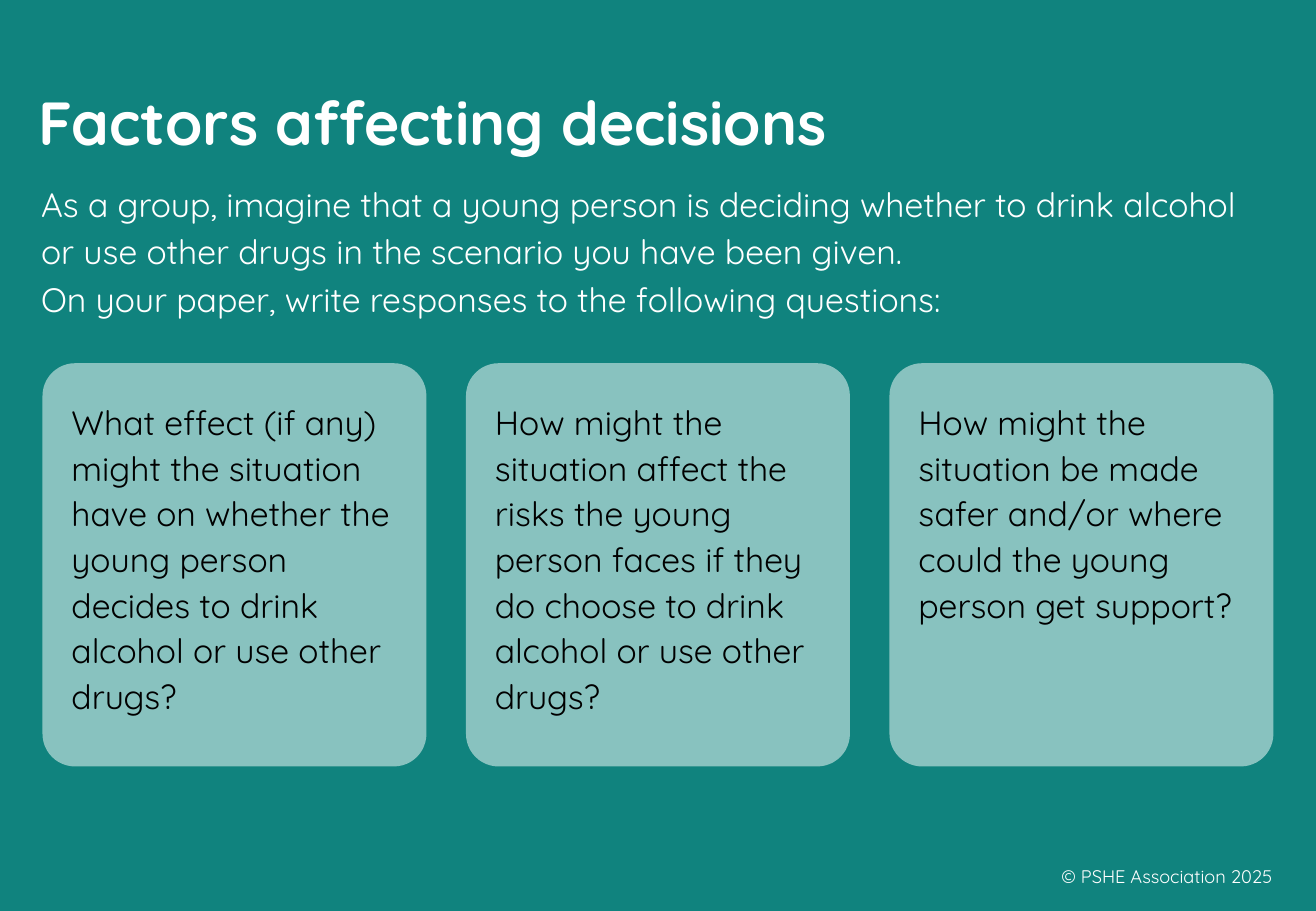
from pptx import Presentation
from pptx.dml.color import RGBColor
from pptx.enum.shapes import MSO_SHAPE
from pptx.enum.text import MSO_ANCHOR, PP_ALIGN
from pptx.util import Inches, Pt

TITLE = "Factors affecting decisions"
INTRO = [
    "As a group, imagine that a young person is deciding whether to drink alcohol "
    "or use other drugs in the scenario you have been given.",
    "On your paper, write responses to the following questions:",
]
QUESTIONS = [
    "What effect (if any) might the situation have on whether the young person "
    "decides to drink alcohol or use other drugs?",
    "How might the situation affect the risks the young person faces if they do "
    "choose to drink alcohol or use other drugs?",
    "How might the situation be made safer and/or where could the young person "
    "get support?",
]
COPYRIGHT = "© PSHE Association 2025"

FONT = "Quicksand"
TEAL = RGBColor(0x10, 0x83, 0x7E)
PALE_TEAL = RGBColor(0x88, 0xC2, 0xBF)
WHITE = RGBColor(0xFF, 0xFF, 0xFF)
BLACK = RGBColor(0, 0, 0)
TOP, MIDDLE, BOTTOM = MSO_ANCHOR.TOP, MSO_ANCHOR.MIDDLE, MSO_ANCHOR.BOTTOM
LEFT, RIGHT = PP_ALIGN.LEFT, PP_ALIGN.RIGHT
ROUNDED = MSO_SHAPE.ROUNDED_RECTANGLE

# Inches
SLIDE_WIDTH, SLIDE_HEIGHT = 10.83, 7.5
MARGIN = 0.35
CARD_WIDTH, CARD_HEIGHT, CARD_TOP = 3.16, 3.32, 2.99
CARD_GAP = (SLIDE_WIDTH - 2 * MARGIN - len(QUESTIONS) * CARD_WIDTH) / (len(QUESTIONS) - 1)


def box(left, top, width, height):
    return [Inches(length) for length in (left, top, width, height)]


def write(shape, lines, size, color, anchor=TOP, align=LEFT, spacing=None, bold=False):
    """Fill a shape with one paragraph whose lines are parted by line breaks."""
    frame = shape.text_frame
    frame.word_wrap = True
    frame.vertical_anchor = anchor
    paragraph = frame.paragraphs[0]
    paragraph.alignment = align
    paragraph.space_before = Pt(0)
    if spacing:
        paragraph.line_spacing = Pt(spacing)
    for index, line in enumerate(lines):
        if index:
            paragraph.add_line_break()
        run = paragraph.add_run()
        run.text = line
        run.font.name = FONT
        run.font.size = Pt(size)
        run.font.bold = bold
        run.font.color.rgb = color


def add_card(slide, column, question):
    left = MARGIN + column * (CARD_WIDTH + CARD_GAP)
    card = slide.shapes.add_shape(ROUNDED, *box(left, CARD_TOP, CARD_WIDTH, CARD_HEIGHT))
    card.adjustments[0] = 0.085
    card.shadow.inherit = False
    card.fill.solid()
    card.fill.fore_color.rgb = PALE_TEAL
    card.line.fill.background()
    frame = card.text_frame
    frame.margin_left = frame.margin_right = Inches(0.16)
    frame.margin_top, frame.margin_bottom = Inches(0.2), Inches(0.05)
    write(card, [question], 20, BLACK, spacing=27)


def main():
    presentation = Presentation()
    presentation.slide_width = Inches(SLIDE_WIDTH)
    presentation.slide_height = Inches(SLIDE_HEIGHT)
    slide = presentation.slides.add_slide(presentation.slide_layouts[5])
    slide.background.fill.solid()
    slide.background.fill.fore_color.rgb = TEAL

    title = slide.shapes.title
    title.left, title.top, title.width, title.height = box(0.22, 0.59, 7.01, 0.76)
    write(title, [TITLE], 36, WHITE, anchor=BOTTOM, spacing=43, bold=True)

    intro = slide.shapes.add_textbox(*box(0.24, 1.41, 10.27, 1.24))
    write(intro, INTRO, 20, WHITE, spacing=28)

    for column, question in enumerate(QUESTIONS):
        add_card(slide, column, question)

    footer = slide.shapes.add_textbox(*box(8.13, 7.01, 2.44, 0.4))
    write(footer, [COPYRIGHT], 10.8, WHITE, anchor=MIDDLE, align=RIGHT)

    presentation.save("out.pptx")


if __name__ == "__main__":
    main()
